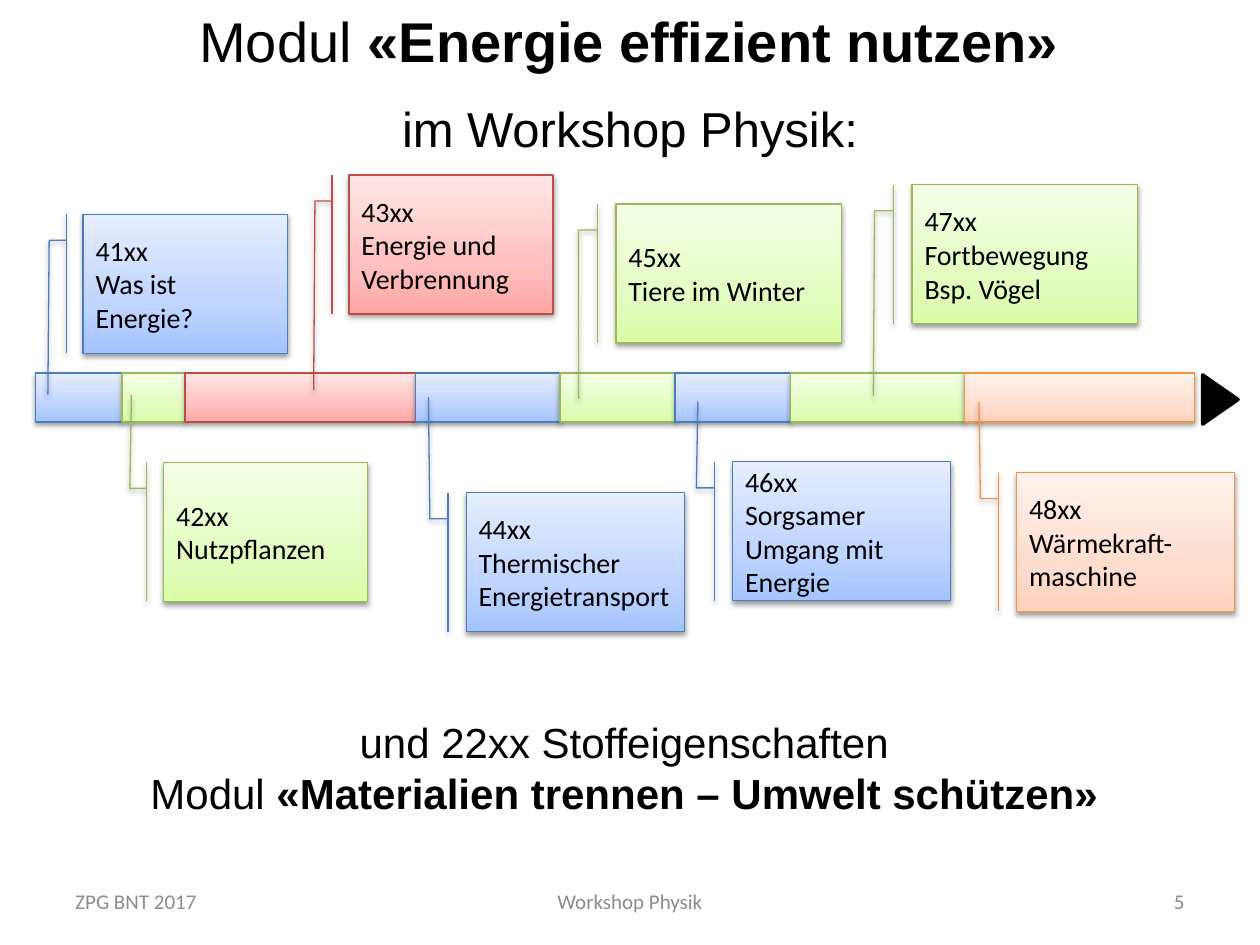
"""Build the module timeline slide for the physics workshop."""
import copy
from dataclasses import dataclass, field

import lxml.etree
import pptx
import pptx.dml.color
import pptx.enum.shapes
import pptx.enum.text
import pptx.oxml.ns
import pptx.util

Pt = pptx.util.Pt
RGB = pptx.dml.color.RGBColor.from_string
SHAPE = pptx.enum.shapes.MSO_SHAPE
ALIGN = pptx.enum.text.PP_ALIGN
ANCHOR = pptx.enum.text.MSO_ANCHOR
qn = pptx.oxml.ns.qn


@dataclass
class Theme:
    black: str = "000000"
    grey: str = "8C8C8C"
    heading_font: str = "Arial"
    body_font: str = "Calibri"
    title: int = 32
    subtitle: int = 28
    closing: int = 24
    body: int = 16
    footer: int = 12
    stops: tuple = (0, 0.35, 1)
    topics: dict = field(default_factory=lambda: {
        "blue": ("4B7EBC", "A4C4FF", "BFD4FF", "E6EEFF"),
        "green": ("98B955", "DAFDA7", "E4FCC2", "F5FFE7"),
        "red": ("BF4C48", "FFA6A5", "FFC0BF", "FFE7E7"),
        "orange": ("F69240", "FFD2BD", "FFDED0", "FFF2ED"),
    })


theme = Theme()


def add_topic_shape(kind, box, topic):
    """Add a shape with the topic's gradient, outline and soft shadow."""
    shape = slide.shapes.add_shape(kind, *map(Pt, box))
    outline, *shades = theme.topics[topic]
    shape.fill.gradient()
    shape.fill.gradient_angle = 90
    stop_list = shape._element.spPr.find(qn("a:gradFill")).find(qn("a:gsLst"))
    stop_list.append(copy.deepcopy(stop_list[0]))
    for stop, position, shade in zip(shape.fill.gradient_stops, theme.stops, shades):
        stop.position = position
        stop.color.rgb = RGB(shade)
    shape.line.color.rgb = RGB(outline)
    shape.line.width = Pt(0.75)
    shape.shadow.inherit = False
    effects = shape._element.spPr.find(qn("a:effectLst"))
    shadow = lxml.etree.SubElement(effects, qn("a:outerShdw"), blurRad=str(Pt(3.1)),
                                   dist=str(Pt(1.6)), dir="5400000", rotWithShape="0")
    shade = lxml.etree.SubElement(shadow, qn("a:srgbClr"), val=theme.black)
    lxml.etree.SubElement(shade, qn("a:alpha"), val="38000")
    return shape


def format_text(frame, font, size, color, align):
    """Give every paragraph and run in the frame one look."""
    for paragraph in frame.paragraphs:
        paragraph.alignment = align
        for run in paragraph.runs:
            run.font.name = font
            run.font.size = Pt(size)
            run.font.color.rgb = RGB(color)


deck = pptx.Presentation()
deck.slide_width, deck.slide_height = Pt(720), Pt(540)
slide = deck.slides.add_slide(deck.slide_layouts[6])

arrow_tip = slide.shapes.add_shape(SHAPE.ISOSCELES_TRIANGLE, Pt(683.3), Pt(218.2), Pt(28.1), Pt(20.2))
arrow_tip.rotation = 90
arrow_tip.shadow.inherit = False
arrow_tip.fill.solid()
arrow_tip.fill.fore_color.rgb = RGB(theme.black)
arrow_tip.line.color.rgb = RGB(theme.black)
arrow_tip.line.width = Pt(2)

segments = [
    ("blue", 49.6), ("green", 36), ("red", 131.8), ("blue", 82.4),
    ("green", 65.8), ("blue", 65.8), ("green", 99.4), ("orange", 131.8),
]
segment_left = 20.2
for topic, width in segments:
    add_topic_shape(SHAPE.RECTANGLE, (segment_left, 213.1, width, 28.1), topic)
    segment_left += width

lessons = [
    ("blue", 47.5, 122.4, 116.6, 1.296, -0.173, "41xx\nWas ist Energie?"),
    ("green", 93.6, 264.2, 116.6, -0.486, -0.159, "42xx\nNutzpflanzen"),
    ("red", 199.4, 100, 116.6, 1.549, -0.173, "43xx\nEnergie und Verbrennung"),
    ("blue", 266.4, 281.5, 124.6, -0.687, -0.173, "44xx\nThermischer Energietransport"),
    ("green", 352, 116.6, 128.9, 1.402, -0.166, "45xx\nTiere im Winter"),
    ("blue", 418.7, 263.9, 124.6, -0.434, -0.16, "46xx\nSorgsamer Umgang mit Energie"),
    ("green", 521.2, 105.6, 128.9, 1.518, -0.172, "47xx\nFortbewegung\nBsp. Vögel"),
    ("orange", 581, 270, 124.6, -0.507, -0.173, "48xx\nWärmekraft-maschine"),
]
for topic, left, top, width, pointer_y, pointer_x, text in lessons:
    lesson = add_topic_shape(SHAPE.LINE_CALLOUT_2_BORDER_AND_ACCENT_BAR, (left, top, width, 79.4), topic)
    for index, value in enumerate((0.1875, -0.0833, 0.1875, -0.1667, pointer_y, pointer_x)):
        lesson.adjustments[index] = value
    lesson.text_frame.text = text
    lesson.text_frame.word_wrap = True
    lesson.text_frame.vertical_anchor = ANCHOR.MIDDLE
    format_text(lesson.text_frame, theme.body_font, theme.body, theme.black, ALIGN.LEFT)

headings = [
    ((105.1, 0, 509, 46.1), theme.title, "Modul", " «Energie effizient nutzen»", False),
    ((176.4, 52.6, 367.2, 41), theme.subtitle, "im Workshop Physik:", "", True),
    ((34.6, 406.1, 650.9, 65.5), theme.closing, "und 22xx Stoffeigenschaften \vModul",
     " «Materialien trennen – Umwelt schützen» ", True),
]
for box, size, text, emphasis, wrap in headings:
    heading = slide.shapes.add_textbox(*map(Pt, box)).text_frame
    heading.word_wrap = wrap
    heading.text = text
    if emphasis:
        module_name = heading.paragraphs[0].add_run()
        module_name.text = emphasis
        module_name.font.bold = True
    format_text(heading, theme.heading_font, size, theme.black, ALIGN.CENTER)

footers = [
    (36, 168, "ZPG BNT 2017", ALIGN.LEFT),
    (246, 228, "Workshop Physik", ALIGN.CENTER),
    (516, 168, "5", ALIGN.RIGHT),
]
for left, width, text, align in footers:
    footer = slide.shapes.add_textbox(Pt(left), Pt(500.5), Pt(width), Pt(28.8)).text_frame
    footer.word_wrap = True
    footer.vertical_anchor = ANCHOR.MIDDLE
    footer.text = text
    format_text(footer, theme.body_font, theme.footer, theme.grey, align)

deck.save("out.pptx")
